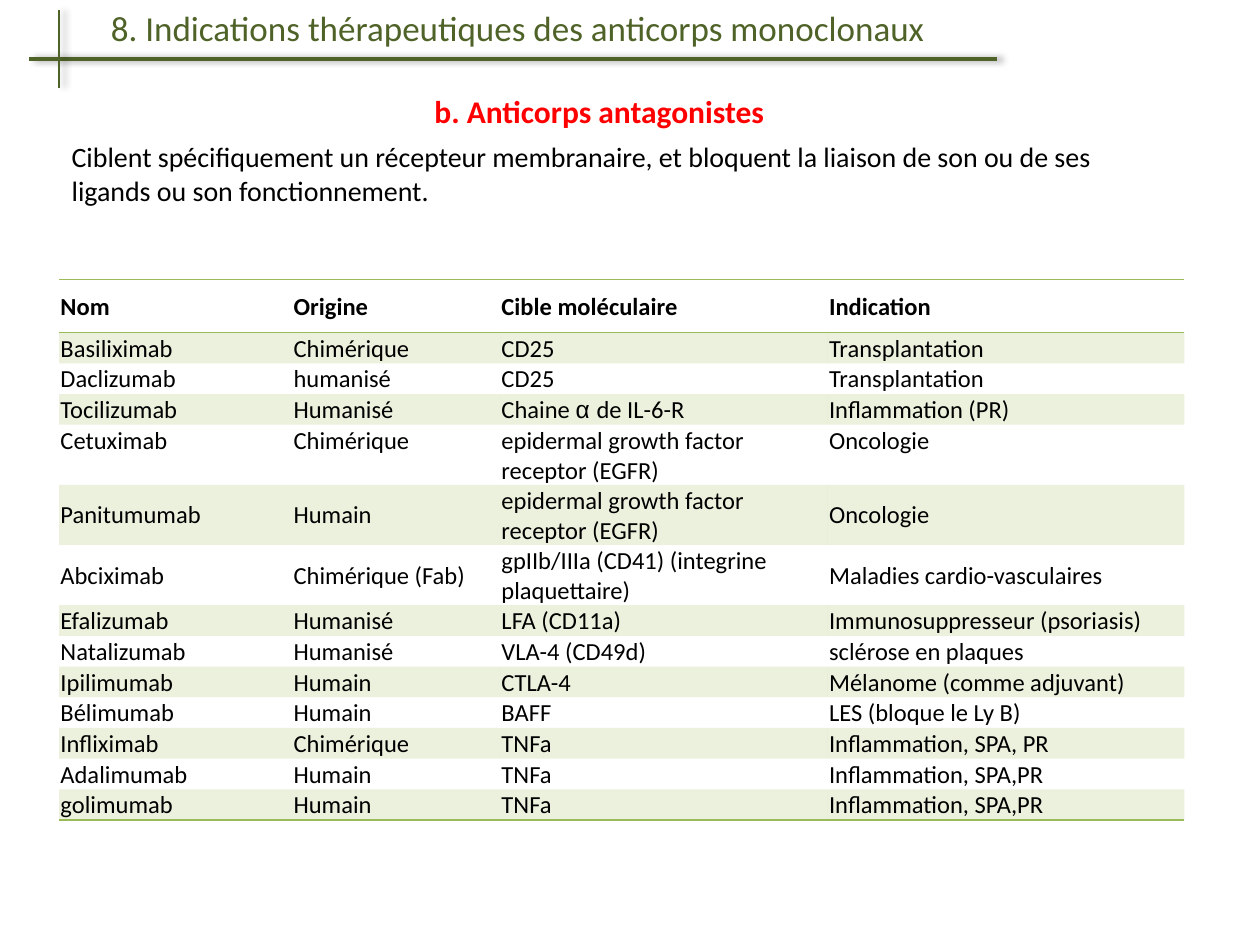
from lxml.etree import SubElement
from pptx import Presentation
from pptx.dml.color import RGBColor
from pptx.enum.shapes import MSO_CONNECTOR
from pptx.enum.text import MSO_ANCHOR, PP_ALIGN
from pptx.oxml import parse_xml
from pptx.oxml.ns import nsdecls, qn
from pptx.util import Inches, Pt

DARK_GREEN = RGBColor(0x4F, 0x62, 0x28)
GREEN = RGBColor(0x9B, 0xBB, 0x59)
RED = RGBColor(0xFF, 0x00, 0x00)
BLACK = RGBColor(0x00, 0x00, 0x00)
NO_GRID_STYLE = "{2D5ABB26-0587-4C30-8999-92F81FD0307C}"

# box (left, top, width, height), paragraphs, wrap, alignment, font
TEXTS = [
    ((0.31, 0, 7.6, 0.44),
     ["8. Indications thérapeutiques des anticorps monoclonaux"],
     True, PP_ALIGN.CENTER, {"size": Pt(20), "color": DARK_GREEN}),
    ((3.35, 0.68, 2.84, 0.4), ["b. Anticorps antagonistes"],
     False, PP_ALIGN.LEFT, {"size": Pt(18), "color": RED, "bold": True}),
    ((0.47, 1.06, 9.18, 0.64),
     ["Ciblent spécifiquement un récepteur membranaire, et bloquent la liaison de son ou de ses",
      "ligands ou son fonctionnement."],
     True, PP_ALIGN.LEFT, {"size": Pt(16), "color": BLACK}),
]

# start, end, width in points
TITLE_LINES = [
    ((0.23, 0.47), (7.91, 0.47), 0),
    ((0.47, 0.08), (0.47, 0.7), 0.9),
]

ANTIBODIES = [
    ("Nom", "Origine", "Cible moléculaire", "Indication"),
    ("Basiliximab", "Chimérique", "CD25", "Transplantation"),
    ("Daclizumab", "humanisé", "CD25", "Transplantation"),
    ("Tocilizumab", "Humanisé", "Chaine α de IL-6-R", "Inflammation (PR)"),
    ("Cetuximab", "Chimérique", "epidermal growth factor receptor (EGFR)", "Oncologie"),
    ("Panitumumab", "Humain", "epidermal growth factor receptor (EGFR)", "Oncologie"),
    ("Abciximab", "Chimérique (Fab)", "gpIIb/IIIa (CD41) (integrine plaquettaire)",
     "Maladies cardio-vasculaires"),
    ("Efalizumab", "Humanisé", "LFA (CD11a)", "Immunosuppresseur (psoriasis)"),
    ("Natalizumab", "Humanisé", "VLA-4 (CD49d)", "sclérose en plaques"),
    ("Ipilimumab", "Humain", "CTLA-4", "Mélanome (comme adjuvant)"),
    ("Bélimumab", "Humain", "BAFF", "LES (bloque le Ly B)"),
    ("Infliximab", "Chimérique", "TNFa", "Inflammation, SPA, PR"),
    ("Adalimumab", "Humain", "TNFa", "Inflammation, SPA,PR"),
    ("golimumab", "Humain", "TNFa", "Inflammation, SPA,PR"),
]
COLUMN_WIDTHS = [1.85, 1.65, 2.6, 2.83]
HEADER_HEIGHT, ROW_HEIGHT = 0.42, 0.2
TOP_ALIGNED = {"Cetuximab"}
CELL_MARGINS = {"margin_left": 0.01, "margin_top": 0.01,
                "margin_right": 0.01, "margin_bottom": 0}


def add_run(p, text, color, name="Calibri", **font):
    r = p.add_run()
    r.text = text
    r.font.name = name
    r.font.color.rgb = color
    for key, value in font.items():
        setattr(r.font, key, value)


def add_text(s, box, paragraphs, wrap, align, font):
    tf = s.shapes.add_textbox(*map(Inches, box)).text_frame
    tf.word_wrap = wrap
    for i, text in enumerate(paragraphs):
        p = tf.add_paragraph() if i else tf.paragraphs[0]
        p.alignment = align
        add_run(p, text, **font)


def add_title_line(s, start, end, width):
    line = s.shapes.add_connector(MSO_CONNECTOR.STRAIGHT, *map(Inches, start + end))
    line.line.color.rgb = DARK_GREEN
    line.line.width = Pt(width)
    line._element.spPr.append(parse_xml(
        f'<a:effectLst {nsdecls("a")}>'
        f'<a:outerShdw blurRad="{Pt(4)}" dist="{Pt(3)}" dir="0" algn="l" rotWithShape="0">'
        '<a:srgbClr val="000000"><a:alpha val="40000"/></a:srgbClr>'
        '</a:outerShdw></a:effectLst>'))


def add_border(cell, side):
    cell._tc.get_or_add_tcPr().insert(0, parse_xml(
        f'<a:ln{side} {nsdecls("a")} w="{Pt(1)}"><a:solidFill>'
        f'<a:srgbClr val="{GREEN}"/></a:solidFill></a:ln{side}>'))


def fill_cell(cell, banded):
    if not banded:
        cell.fill.background()
        return
    cell.fill.solid()
    cell.fill.fore_color.rgb = GREEN
    color = cell._tc.tcPr.find(f'{qn("a:solidFill")}/{qn("a:srgbClr")}')
    SubElement(color, qn("a:alpha"), val="20000")


def write_cell(cell, text, bold):
    """Write the text, with the Greek letter in Arial."""
    p = cell.text_frame.paragraphs[0]
    before, alpha, after = text.partition("α ")
    for part, name in ((before, "Calibri"), (alpha, "Arial"), (after, "Calibri")):
        if part:
            add_run(p, part, BLACK, name, size=Pt(14), bold=bold)


def add_antibody_table(s):
    last = len(ANTIBODIES) - 1
    height = HEADER_HEIGHT + last * ROW_HEIGHT
    table = s.shapes.add_table(
        len(ANTIBODIES), len(COLUMN_WIDTHS), Inches(0.47), Inches(2.22),
        Inches(sum(COLUMN_WIDTHS)), Inches(height)).table
    table._tbl.tblPr.find(qn("a:tableStyleId")).text = NO_GRID_STYLE
    for column, width in zip(table.columns, COLUMN_WIDTHS):
        column.width = Inches(width)
    for i, values in enumerate(ANTIBODIES):
        table.rows[i].height = Inches(ROW_HEIGHT if i else HEADER_HEIGHT)
        for cell, text in zip(table.rows[i].cells, values):
            for key, margin in CELL_MARGINS.items():
                setattr(cell, key, Inches(margin))
            top = values[0] in TOP_ALIGNED
            cell.vertical_anchor = MSO_ANCHOR.TOP if top else MSO_ANCHOR.MIDDLE
            write_cell(cell, text, bold=i == 0)
            fill_cell(cell, banded=i % 2 == 1)
            if i in (0, last):
                add_border(cell, "B")
            if i == 0:
                add_border(cell, "T")


def main():
    prs = Presentation()
    prs.slide_width, prs.slide_height = Inches(10), Inches(7.5)
    s = prs.slides.add_slide(prs.slide_layouts[6])
    for text in TEXTS:
        add_text(s, *text)
    for line in TITLE_LINES:
        add_title_line(s, *line)
    add_antibody_table(s)
    prs.save("out.pptx")


if __name__ == "__main__":
    main()
